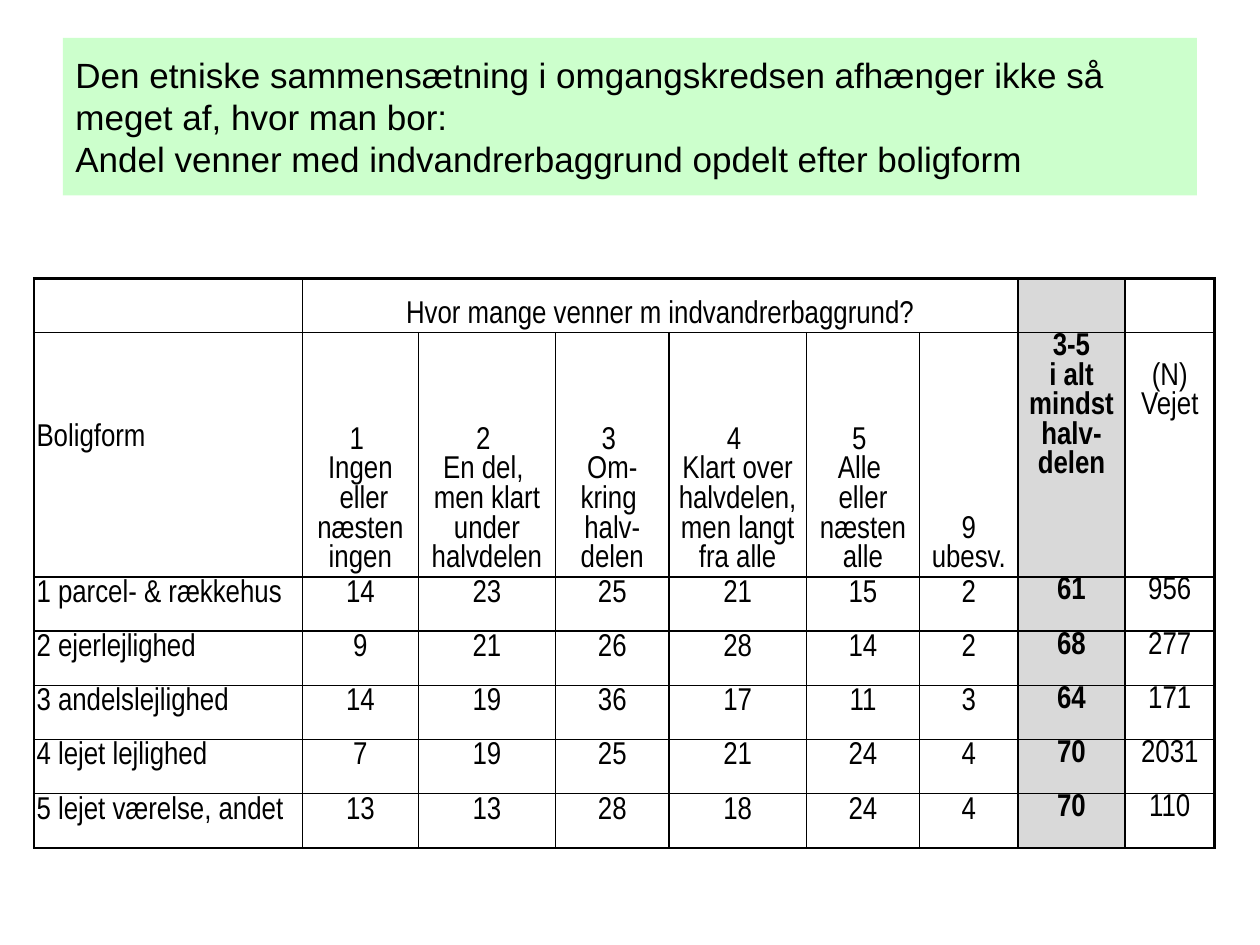
from pptx import Presentation
from pptx.dml.color import RGBColor
from pptx.enum.text import MSO_ANCHOR, PP_ALIGN
from pptx.oxml import parse_xml
from pptx.oxml.ns import nsdecls
from pptx.util import Inches, Pt

LEFT, CENTER = PP_ALIGN.LEFT, PP_ALIGN.CENTER
TOP, MIDDLE, BOTTOM = MSO_ANCHOR.TOP, MSO_ANCHOR.MIDDLE, MSO_ANCHOR.BOTTOM

COLORS = {"text": "000000", "border": "000000", "banner": "CCFFCC",
          "cell": "FFFFFF", "total": "D9D9D9"}

TITLE = ("Den etniske sammensætning i omgangskredsen afhænger ikke så "
         "meget af, hvor man bor:\v"
         "Andel venner med indvandrerbaggrund opdelt efter boligform")

# Line breaks separate the paragraphs of a cell
ROWS = [
    ["", "Hvor mange venner m indvandrerbaggrund?", "", "", "", "", "", "", ""],
    ["Boligform", "1 \nIngen\n eller næsten ingen",
     "2 \nEn del, \nmen klart under halvdelen",
     "3 \nOm-\nkring \nhalv-\ndelen",
     "4 \nKlart over halvdelen, men langt fra alle",
     "5 \nAlle \neller næsten alle", "9\nubesv.",
     "3-5\ni alt\nmindst\nhalv-\ndelen", "(N)\nVejet"],
    ["1 parcel- & rækkehus", 14, 23, 25, 21, 15, 2, 61, 956],
    ["2 ejerlejlighed", 9, 21, 26, 28, 14, 2, 68, 277],
    ["3 andelslejlighed", 14, 19, 36, 17, 11, 3, 64, 171],
    ["4 lejet lejlighed", 7, 19, 25, 21, 24, 4, 70, 2031],
    ["5 lejet værelse, andet", 13, 13, 28, 18, 24, 4, 70, 110],
]
LABEL_COLUMN, TOTAL_COLUMN, COUNT_COLUMN = 0, 7, 8
HEADER_ROW = 1
LAST_ROW = len(ROWS) - 1
COLUMN_WIDTHS = [21.3, 9.2, 10.9, 9, 10.9, 9, 7.8, 8.5, 7.1]
ROW_HEIGHTS = [4.3, 19.4] + [4.3] * 5
LINE_HEIGHT = 2.35  # one line of table text, in grid rows
INSET = 0.2


class SlideBuilder:
    """Places elements on a grid of 100 columns and 75 rows."""

    def __init__(self, presentation):
        self.slide = presentation.slides.add_slide(presentation.slide_layouts[6])
        self.column = presentation.slide_width / 100
        self.row = presentation.slide_height / 75

    def box(self, left, top, width, height):
        return (round(left * self.column), round(top * self.row),
                round(width * self.column), round(height * self.row))

    def style_text(self, text_frame, font_name, size, bold=False, align=LEFT):
        for paragraph in text_frame.paragraphs:
            paragraph.alignment = align
            paragraph.font.name = font_name
            paragraph.font.size = Pt(size)
            paragraph.font.bold = bold
            paragraph.font.color.rgb = RGBColor.from_string(COLORS["text"])

    def fill(self, target, color):
        target.fill.solid()
        target.fill.fore_color.rgb = RGBColor.from_string(COLORS[color])

    def banner(self, text, *place):
        shape = self.slide.shapes.add_textbox(*self.box(*place))
        self.fill(shape, "banner")
        text_frame = shape.text_frame
        text_frame.word_wrap = True
        text_frame.vertical_anchor = MIDDLE
        text_frame.text = text
        self.style_text(text_frame, "Arial", 20)

    def table(self, left, top):
        place = self.box(left, top, sum(COLUMN_WIDTHS), sum(ROW_HEIGHTS))
        table = self.slide.shapes.add_table(
            len(ROWS), len(COLUMN_WIDTHS), *place).table
        table.first_row = table.horz_banding = False
        for column, width in zip(table.columns, COLUMN_WIDTHS):
            column.width = round(width * self.column)
        for row, height in zip(table.rows, ROW_HEIGHTS):
            row.height = round(height * self.row)
        for row, values in enumerate(ROWS):
            for column, value in enumerate(values):
                self.cell(table.cell(row, column), row, column, str(value))
        table.cell(0, 1).merge(table.cell(0, TOTAL_COLUMN - 1))

    def cell(self, cell, row, column, text):
        is_label = column == LABEL_COLUMN
        is_total = column == TOTAL_COLUMN
        is_share = LABEL_COLUMN < column < TOTAL_COLUMN
        cell.text = text
        self.style_text(cell.text_frame, "Arial Narrow", 18, is_total,
                        LEFT if is_label else CENTER)
        cell.vertical_anchor = BOTTOM if is_share and row <= HEADER_ROW else TOP

        # Header labels start some lines below the top of their cell
        inset = INSET if column < TOTAL_COLUMN else 0
        skipped_lines = {LABEL_COLUMN: 3, COUNT_COLUMN: 1}.get(column, 0)
        offset = skipped_lines * LINE_HEIGHT if row == HEADER_ROW else 0
        cell.margin_left = cell.margin_right = round(INSET * self.column)
        cell.margin_top = round((inset + offset) * self.row)
        cell.margin_bottom = round(inset * self.row)

        # Outer edges are heavier than inner ones
        heavy = {"L": is_label, "R": column == COUNT_COLUMN, "T": row == 0,
                 "B": is_total and row == LAST_ROW}
        for side, is_heavy in heavy.items():
            self.border(cell, side, 1.5 if is_heavy else 1)
        if column == COUNT_COLUMN:
            cell.fill.background()
        else:
            self.fill(cell, "total" if is_total else "cell")

    def border(self, cell, side, width):
        cell._tc.get_or_add_tcPr().append(parse_xml(
            f'<a:ln{side} {nsdecls("a")} w="{Pt(width)}"><a:solidFill>'
            f'<a:srgbClr val="{COLORS["border"]}"/></a:solidFill></a:ln{side}>'))


def main():
    presentation = Presentation()
    presentation.slide_width = Inches(10)
    presentation.slide_height = Inches(7.5)
    builder = SlideBuilder(presentation)
    builder.banner(TITLE, 5, 3, 90, 12.5)
    builder.table(2.7, 22.1)
    presentation.save("out.pptx")


if __name__ == "__main__":
    main()
